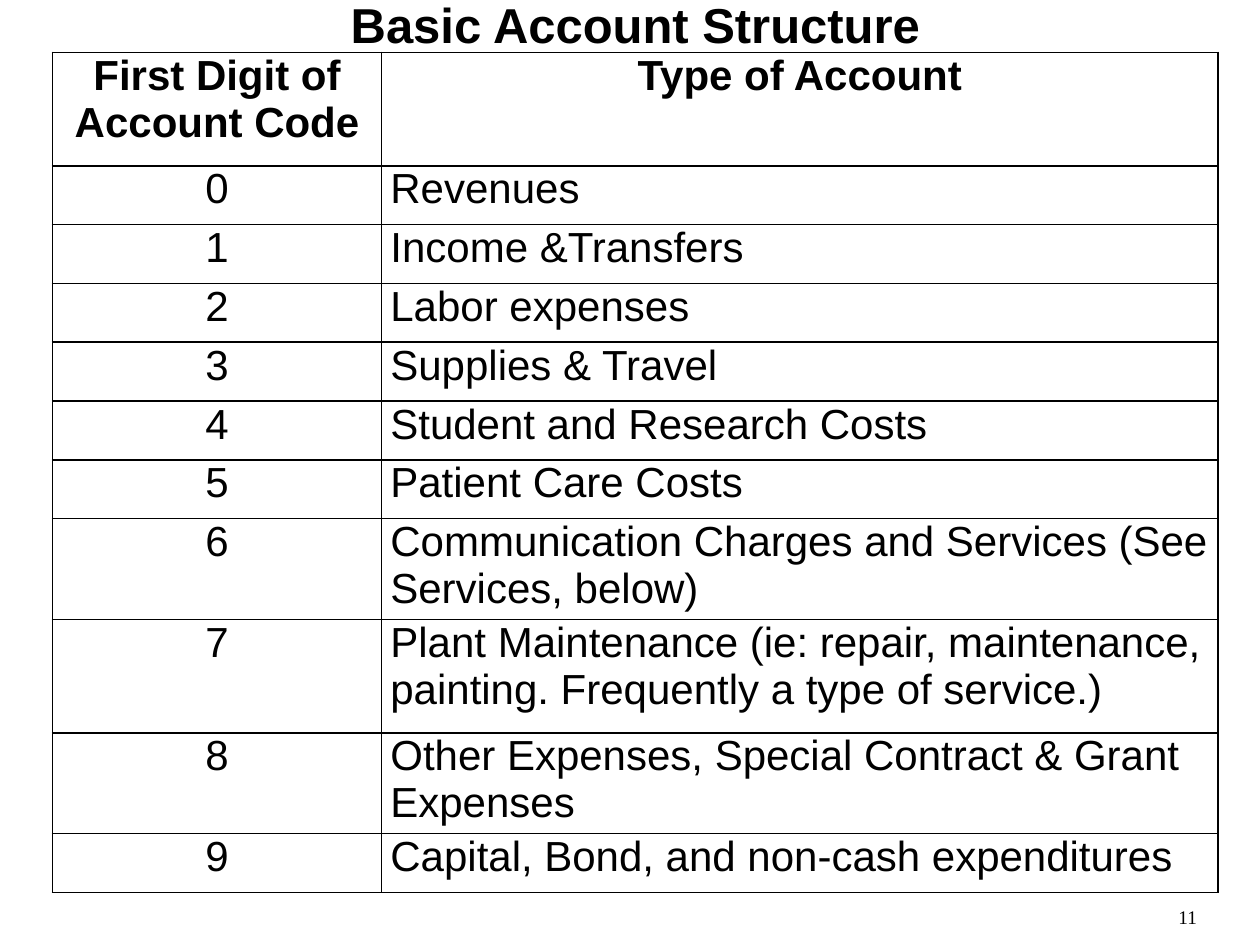
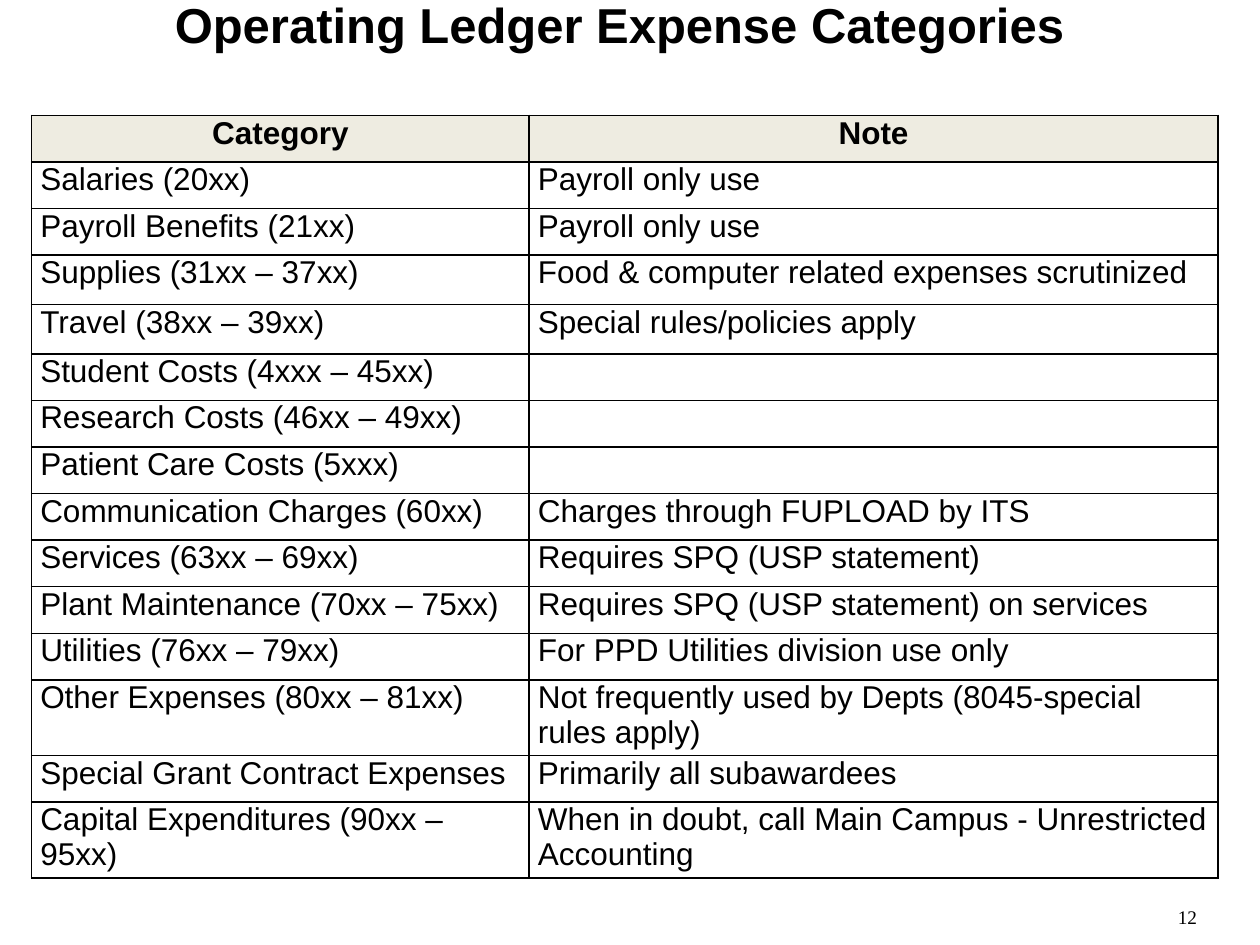
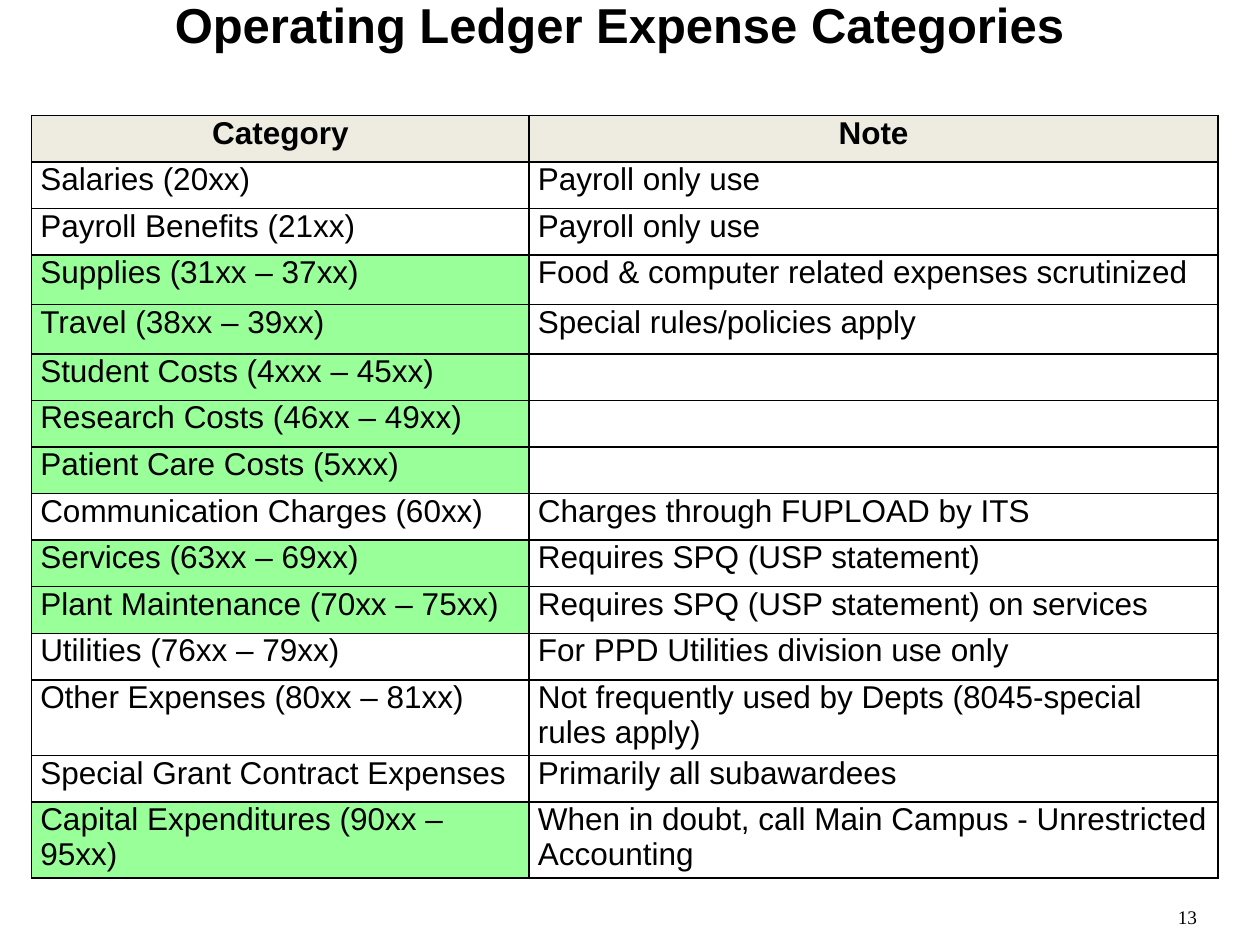
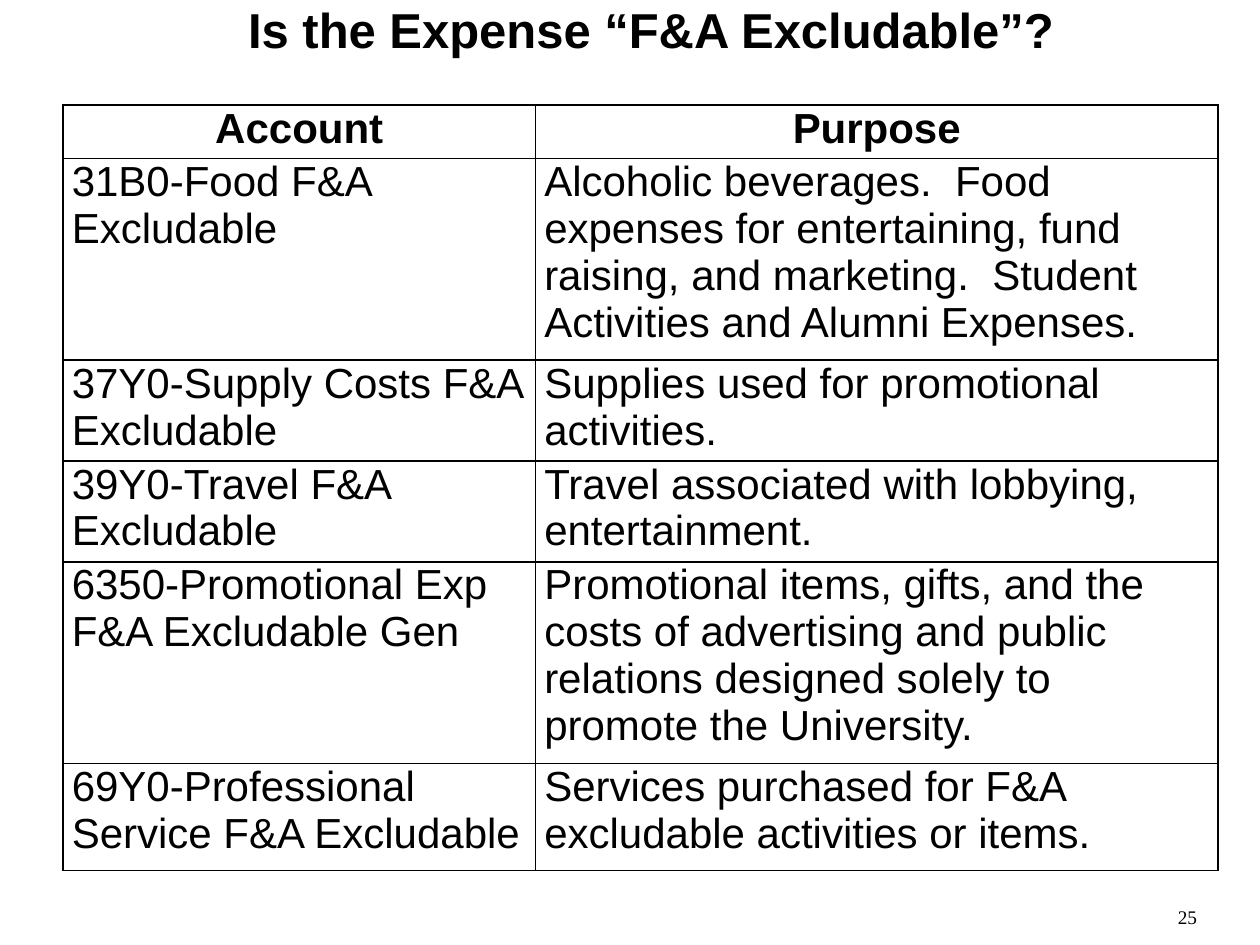
from lxml import etree
from pptx import Presentation
from pptx.dml.color import RGBColor
from pptx.enum.text import MSO_ANCHOR, PP_ALIGN
from pptx.oxml.ns import qn
from pptx.util import Inches, Pt

LEFT, CENTER, RIGHT = PP_ALIGN.LEFT, PP_ALIGN.CENTER, PP_ALIGN.RIGHT
TOP, MIDDLE = MSO_ANCHOR.TOP, MSO_ANCHOR.MIDDLE

BLACK = RGBColor(0x00, 0x00, 0x00)
CREAM = RGBColor(0xEE, 0xEC, 0xE1)
GREEN = RGBColor(0x99, 0xFF, 0x99)

SLIDE_WIDTH, SLIDE_HEIGHT = Inches(10), Inches(7.5)
GRID_COLUMNS = 120
BLANK_LAYOUT = 6
TITLE_FONT = {"name": "Arial", "size": Pt(28), "bold": True}
NUMBER_FONT = {"name": "Times New Roman", "size": Pt(11), "bold": False}
CELL_MARGINS = {
    "margin_left": Inches(0.07),
    "margin_right": Inches(0.07),
    "margin_top": 0,
    "margin_bottom": 0,
}

ACCOUNT_TYPES = [
    "Revenues",
    "Income &Transfers",
    "Labor expenses",
    "Supplies & Travel",
    "Student and Research Costs",
    "Patient Care Costs",
    "Communication Charges and Services (See Services, below)",
    "Plant Maintenance (ie: repair, maintenance, painting. Frequently a type of service.)",
    "Other Expenses, Special Contract & Grant Expenses",
    "Capital, Bond, and non-cash expenditures",
]
ACCOUNT_STRUCTURE = [("First Digit of Account Code", "Type of Account")] + [
    (str(digit), account_type) for digit, account_type in enumerate(ACCOUNT_TYPES)
]
EXPENSE_CATEGORIES = [
    ("Category", "Note"),
    ("Salaries (20xx)", "Payroll only use"),
    ("Payroll Benefits (21xx)", "Payroll only use"),
    ("Supplies (31xx – 37xx)", "Food & computer related expenses scrutinized"),
    ("Travel (38xx – 39xx)", "Special rules/policies apply"),
    ("Student Costs (4xxx – 45xx)", ""),
    ("Research Costs (46xx – 49xx)", ""),
    ("Patient Care Costs (5xxx)", ""),
    ("Communication Charges (60xx)", "Charges through FUPLOAD by ITS"),
    ("Services (63xx – 69xx)", "Requires SPQ (USP statement)"),
    ("Plant Maintenance (70xx – 75xx)", "Requires SPQ (USP statement) on services"),
    ("Utilities (76xx – 79xx)", "For PPD Utilities division use only"),
    ("Other Expenses (80xx – 81xx)", "Not frequently used by Depts (8045-special rules apply)"),
    ("Special Grant Contract Expenses", "Primarily all subawardees"),
    (
        "Capital Expenditures (90xx – 95xx)",
        "When in doubt, call Main Campus - Unrestricted Accounting",
    ),
]
HIGHLIGHTED_ROWS = (3, 4, 5, 6, 7, 9, 10, 14)
EXCLUDABLE_ACCOUNTS = [
    ("Account", "Purpose"),
    (
        "31B0-Food F&A Excludable",
        "Alcoholic beverages.  Food expenses for entertaining, fund raising, and marketing.  "
        "Student Activities and Alumni Expenses.",
    ),
    ("37Y0-Supply Costs F&A Excludable", "Supplies used for promotional activities."),
    ("39Y0-Travel F&A Excludable", "Travel associated with lobbying, entertainment."),
    (
        "6350-Promotional Exp F&A Excludable Gen",
        "Promotional items, gifts, and the costs of advertising and public relations designed "
        "solely to promote the University.",
    ),
    (
        "69Y0-Professional Service F&A Excludable",
        "Services purchased for F&A excludable activities or items.",
    ),
]


def apply(target, values):
    for attribute, value in values.items():
        setattr(target, attribute, value)


class LedgerDeck:
    def __init__(self):
        self.presentation = Presentation()
        apply(self.presentation, {"slide_width": SLIDE_WIDTH, "slide_height": SLIDE_HEIGHT})
        self.slide = None

    def grid(self, *units):
        return [int(unit * SLIDE_WIDTH / GRID_COLUMNS) for unit in units]

    def start(self, number):
        layout = self.presentation.slide_layouts[BLANK_LAYOUT]
        self.slide = self.presentation.slides.add_slide(layout)
        frame = self.text(str(number), (106, 85.8, 8, 3), NUMBER_FONT, RIGHT)
        apply(frame, {"vertical_anchor": MIDDLE, "margin_right": 0})

    def fill_paragraph(self, frame, text, font, alignment):
        paragraph = frame.paragraphs[0]
        paragraph.alignment = alignment
        if text:
            run = paragraph.add_run()
            run.text = text
            apply(run.font, font)
            run.font.color.rgb = BLACK

    def text(self, text, box, font, alignment):
        frame = self.slide.shapes.add_textbox(*self.grid(*box)).text_frame
        apply(frame, {"word_wrap": True, "vertical_anchor": TOP})
        self.fill_paragraph(frame, text, font, alignment)
        return frame

    def title(self, text, box, line_spacing=0.8):
        frame = self.text(text, box, TITLE_FONT, CENTER)
        frame.paragraphs[0].line_spacing = line_spacing

    def border(self, cell):
        properties = cell._tc.get_or_add_tcPr()
        for side in ("lnL", "lnR", "lnT", "lnB"):
            line = etree.SubElement(properties, qn(f"a:{side}"), w=str(Pt(1)))
            fill = etree.SubElement(line, qn("a:solidFill"))
            etree.SubElement(fill, qn("a:srgbClr"), val=str(BLACK))

    def cell(self, cell, text, font, alignment, color):
        apply(cell, {**CELL_MARGINS, "vertical_anchor": TOP})
        self.border(cell)
        if color is None:
            cell.fill.background()
        else:
            cell.fill.solid()
            cell.fill.fore_color.rgb = color
        self.fill_paragraph(cell.text_frame, text, font, alignment)

    def table(self, entries, corner, widths, heights, size, first_alignment=LEFT, fills=None):
        fills = fills or {}
        box = self.grid(*corner, sum(widths), sum(heights))
        table = self.slide.shapes.add_table(len(entries), len(widths), *box).table
        apply(table, {"first_row": False, "horz_banding": False})
        for column, width in zip(table.columns, self.grid(*widths)):
            column.width = width
        for row, height in zip(table.rows, self.grid(*heights)):
            row.height = height
        for r, entry in enumerate(entries):
            header = r == 0
            font = {"name": "Arial", "size": Pt(size), "bold": header}
            for c, text in enumerate(entry):
                alignment = CENTER if header else (first_alignment, LEFT)[c]
                self.cell(table.cell(r, c), text, font, alignment, fills.get((r, c)))


def main():
    deck = LedgerDeck()

    deck.start(11)
    deck.title("Basic Account Structure", (20, 0, 81, 6))
    structure_heights = [10.8] + [5.6] * 6 + [9.6, 10.8, 9.6, 5.6]
    deck.table(
        ACCOUNT_STRUCTURE, (5, 5), (31.35, 79.65), structure_heights, 24, first_alignment=CENTER
    )

    header_fills = {(0, column): CREAM for column in range(2)}
    highlights = {(row, 0): GREEN for row in HIGHLIGHTED_ROWS}
    category_heights = [4.44] * 3 + [4.7] * 2 + [4.44] * 10
    for number, fills in ((12, header_fills), (13, {**header_fills, **highlights})):
        deck.start(number)
        deck.title("Operating Ledger Expense Categories", (8, 0, 102, 6))
        deck.table(
            EXPENSE_CATEGORIES, (3, 11), (47.4, 65.6), category_heights, 18, fills=fills
        )

    deck.start(25)
    deck.title("Is the Expense “F&A Excludable”?", (15, 0, 94, 8), line_spacing=0.9)
    excludable_heights = [5.1, 19.2, 9.6, 9.6, 19.2, 10.2]
    deck.table(EXCLUDABLE_ACCOUNTS, (6, 10), (45, 65), excludable_heights, 24)

    deck.presentation.save("out.pptx")


if __name__ == "__main__":
    main()
